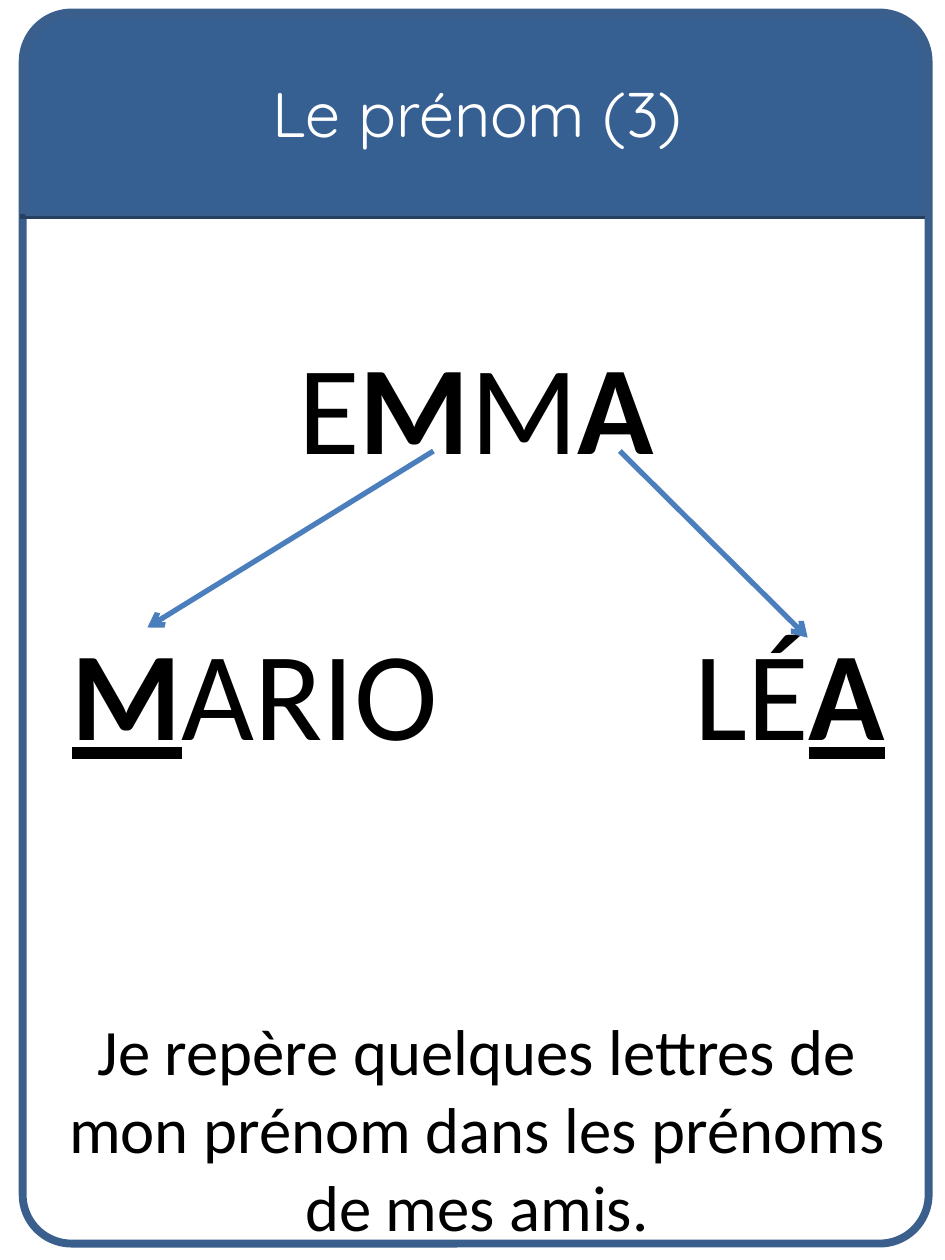
"""Build a portrait classroom card about recognising letters in first names."""
from dataclasses import dataclass

from lxml import etree
from pptx import Presentation
from pptx.dml.color import RGBColor
from pptx.enum.shapes import MSO_CONNECTOR, MSO_SHAPE
from pptx.enum.text import MSO_ANCHOR, MSO_AUTO_SIZE, PP_ALIGN
from pptx.oxml.ns import qn
from pptx.util import Inches, Pt

STRAIGHT = MSO_CONNECTOR.STRAIGHT
ROUNDED = MSO_SHAPE.ROUNDED_RECTANGLE
ROUNDED_TOP = MSO_SHAPE.ROUND_2_SAME_RECTANGLE
MIDDLE = MSO_ANCHOR.MIDDLE
NO_AUTOFIT = MSO_AUTO_SIZE.NONE
CENTER = PP_ALIGN.CENTER


@dataclass(frozen=True)
class Theme:
    """Colours, fonts and type sizes of the card."""
    frame: str = "3A5F8C"
    header: str = "376092"
    divider: str = "254061"
    arrow: str = "4B7EBC"
    light: str = "FFFFFF"
    dark: str = "000000"
    title_font: str = "Quicksand"
    body_font: str = "Calibri"
    title_size: int = 36
    caption_size: int = 37
    name_size: int = 72


THEME = Theme()
PLAIN = {"bold": False, "underline": False}
BOLD = {"bold": True, "underline": False}
MARKED = {"bold": True, "underline": True}


def set_format(target, values):
    """Set each named attribute on the target."""
    for name, value in values.items():
        setattr(target, name, value)


def style_font(font, face, size, color, **extras):
    """Apply typeface, size, colour and further font values."""
    set_format(font, {"name": face, "size": Pt(size), **extras})
    font.color.rgb = RGBColor.from_string(color)


def style_line(line, color, width):
    """Give an outline its colour and its width in points."""
    line.color.rgb = RGBColor.from_string(color)
    line.width = Pt(width)


def add_panel(slide, preset, box, adjustments, line_color, line_width, fill=None):
    """Add a rounded panel, hollow unless a fill is given."""
    panel = slide.shapes.add_shape(preset, *map(Inches, box))
    panel.shadow.inherit = False
    for index, value in enumerate(adjustments):
        panel.adjustments[index] = value
    if fill:
        panel.fill.solid()
        panel.fill.fore_color.rgb = RGBColor.from_string(fill)
    else:
        panel.fill.background()
    style_line(panel.line, line_color, line_width)


def add_line(slide, start, end, color, arrow=False):
    """Add a straight line, with an arrowhead at its end if asked."""
    link = slide.shapes.add_connector(STRAIGHT, *map(Inches, (*start, *end)))
    style_line(link.line, color, 3)
    if arrow:
        etree.SubElement(link.line._get_or_add_ln(), qn("a:tailEnd"), type="arrow")
    etree.SubElement(link._element.spPr, qn("a:effectLst"))


def fill_placeholder(slide, holder, box, text, face, size, color):
    """Place a centred, unbulleted text in a placeholder in front of the panels."""
    left, top, width, height = map(Inches, box)
    set_format(holder, {"left": left, "top": top, "width": width, "height": height})
    frame = holder.text_frame
    frame.text = text
    set_format(frame, {"word_wrap": True, "auto_size": NO_AUTOFIT,
                       "vertical_anchor": MIDDLE})
    paragraph = frame.paragraphs[0]
    set_format(paragraph, {"alignment": CENTER, "space_before": Pt(0)})
    properties = paragraph._p.get_or_add_pPr()
    properties.set("marL", "0")
    properties.set("indent", "0")
    etree.SubElement(properties, qn("a:buNone"))
    style_font(paragraph.runs[0].font, face, size, color)
    slide.shapes._spTree.append(holder._element)


def add_names(slide, box, parts, tab=None):
    """Add a line of names from (letters, format) parts, with an optional tab stop."""
    names = slide.shapes.add_textbox(*map(Inches, box))
    names.text_frame.word_wrap = True
    paragraph = names.text_frame.paragraphs[0]
    if tab:
        stops = etree.SubElement(paragraph._p.get_or_add_pPr(), qn("a:tabLst"))
        etree.SubElement(stops, qn("a:tab"), pos=str(Inches(tab)), algn="l")
    for letters, emphasis in parts:
        run = paragraph.add_run()
        run.text = letters
        style_font(run.font, THEME.body_font, THEME.name_size, THEME.dark, **emphasis)


def main():
    """Build the card and save it."""
    deck = Presentation()
    set_format(deck, {"slide_width": Inches(7.5), "slide_height": Inches(10)})
    slide = deck.slides.add_slide(deck.slide_layouts[1])
    title, caption = slide.placeholders

    add_panel(slide, ROUNDED, (0.18, 0.1, 7.19, 9.77), [0.054], THEME.frame, 4.5)
    add_line(slide, (0.16, 1.72), (7.34, 1.72), THEME.divider)
    add_panel(slide, ROUNDED_TOP, (0.21, 0.13, 7.13, 1.57), [0.222, 0],
              THEME.frame, 2, THEME.header)

    fill_placeholder(slide, title, (0.39, 0.23, 6.8, 1.33), "Le prénom (3)",
                     THEME.title_font, THEME.title_size, THEME.light)
    fill_placeholder(slide, caption, (0.31, 8.13, 6.95, 1.64),
                     "Je repère quelques lettres de mon prénom dans les prénoms de mes amis.",
                     THEME.body_font, THEME.caption_size, THEME.dark)

    add_names(slide, (2.27, 2.56, 3.05, 1.31),
              [("E", PLAIN), ("M", BOLD), ("M", PLAIN), ("A", BOLD)])
    add_names(slide, (0.47, 4.83, 6.95, 1.31),
              [("M", MARKED), ("ARIO", PLAIN), ("\t", PLAIN), ("LÉ", PLAIN), ("A", MARKED)],
              tab=4.94)

    for start, end in (((3.44, 3.58), (1.17, 4.98)), ((4.92, 3.58), (6.41, 5.06))):
        add_line(slide, start, end, THEME.arrow, arrow=True)

    deck.save("out.pptx")


if __name__ == "__main__":
    main()
